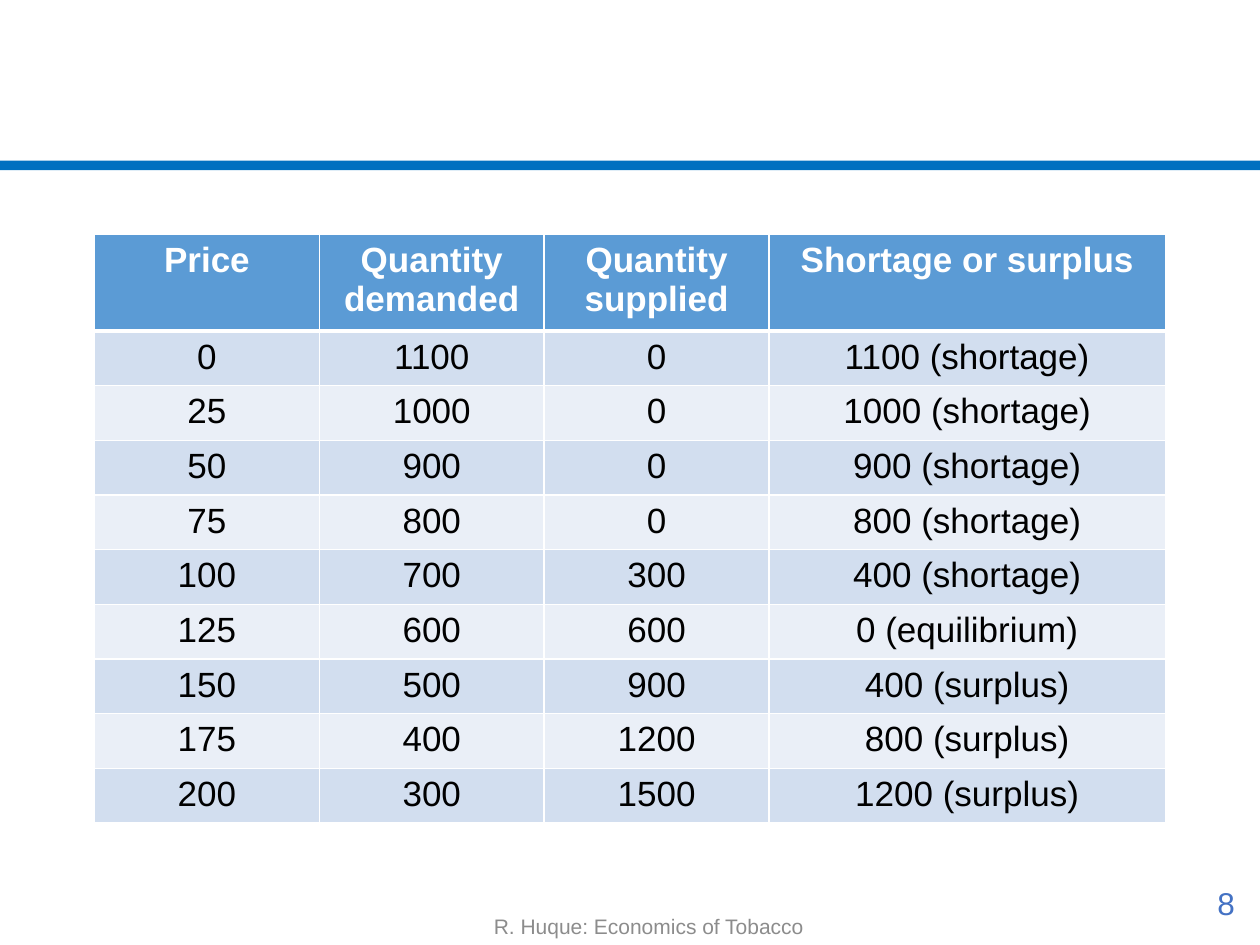
from lxml.etree import SubElement
from pptx import Presentation
from pptx.dml.color import RGBColor as Color
from pptx.enum.shapes import MSO_SHAPE as Preset
from pptx.enum.text import MSO_ANCHOR as Anchor, PP_ALIGN as Align
from pptx.oxml.ns import qn
from pptx.util import Inches, Pt

WIDTH, HEIGHT = 10, 7.5
FONT = "Arial"
COLORS = {
    "rule": "0070C0", "header": "5B9BD5", "band": "D2DEEF", "light": "EAEFF7",
    "white": "FFFFFF", "black": "000000", "footer": "8C8C8C", "number": "4472C4",
}
HEADINGS = ("Price", "Quantity demanded", "Quantity supplied", "Shortage or surplus")
MARKET = (
    (0, 1100, 0), (25, 1000, 0), (50, 900, 0), (75, 800, 0), (100, 700, 300),
    (125, 600, 600), (150, 500, 900), (175, 400, 1200), (200, 300, 1500),
)
COLUMN_SHARES = (0.21, 0.21, 0.21, 0.37)
HEADER_SHARE = 0.16


def box(left, top, width, height):
    """Turn shares of the slide's size into lengths."""
    return (Inches(left * WIDTH), Inches(top * HEIGHT),
            Inches(width * WIDTH), Inches(height * HEIGHT))


def color(name):
    """Look up a named colour."""
    return Color.from_string(COLORS[name])


def write(frame, text, size, color_name, align, bold=False):
    """Write one styled run into a text frame."""
    paragraph = frame.paragraphs[0]
    paragraph.alignment = align
    run = paragraph.add_run()
    run.text = text
    run.font.name = FONT
    run.font.size = Pt(size)
    run.font.bold = bold
    run.font.color.rgb = color(color_name)


def add_rule(slide, area):
    """Draw the full-width bar under the title area."""
    shape = slide.shapes.add_shape(Preset.RECTANGLE, *area)
    shape.shadow.inherit = False
    shape.fill.solid()
    shape.fill.fore_color.rgb = color("rule")
    shape.line.fill.background()


def add_label(slide, area, text, size, color_name, align, anchor):
    """Place a single line of footer text."""
    frame = slide.shapes.add_textbox(*area).text_frame
    frame.word_wrap = True
    frame.vertical_anchor = anchor
    write(frame, text, size, color_name, align)


def set_borders(cell, top, bottom):
    """Draw white borders, with the given top and bottom widths in points."""
    properties = cell._tc.get_or_add_tcPr()
    for index, (side, width) in enumerate(
            (("lnL", 1), ("lnR", 1), ("lnT", top), ("lnB", bottom))):
        line = properties.makeelement(qn(f"a:{side}"), {"w": str(Pt(width))})
        fill = SubElement(line, qn("a:solidFill"))
        SubElement(fill, qn("a:srgbClr"), val=COLORS["white"])
        properties.insert(index, line)


def balance(demanded, supplied):
    """Describe the gap between demand and supply."""
    gap = demanded - supplied
    state = "shortage" if gap > 0 else "surplus" if gap < 0 else "equilibrium"
    return f"{abs(gap)} ({state})"


def add_market_table(slide, area):
    """Fill the area with the table of prices and quantities."""
    records = [HEADINGS] + [(*row, balance(*row[1:])) for row in MARKET]
    table = slide.shapes.add_table(len(records), len(HEADINGS), *area).table
    width, height = area[2:]
    for column, share in zip(table.columns, COLUMN_SHARES):
        column.width = int(width * share)
    for index, (row, record) in enumerate(zip(table.rows, records)):
        header = index == 0
        share = HEADER_SHARE if header else (1 - HEADER_SHARE) / len(MARKET)
        row.height = int(height * share)
        fill_name = "header" if header else "band" if index % 2 else "light"
        for cell, value in zip(row.cells, record):
            cell.fill.solid()
            cell.fill.fore_color.rgb = color(fill_name)
            write(cell.text_frame, str(value), 20,
                  "white" if header else "black", Align.CENTER, header)
            set_borders(cell, 3 if index == 1 else 1, 3 if header else 1)


def main():
    """Build and save the slide."""
    presentation = Presentation()
    presentation.slide_width = Inches(WIDTH)
    presentation.slide_height = Inches(HEIGHT)
    slide = presentation.slides.add_slide(presentation.slide_layouts[6])
    add_rule(slide, box(0, 0.17, 1, 0.01))
    add_label(slide, box(0.33, 0.95, 0.37, 0.05), "R. Huque: Economics of Tobacco",
              12, "footer", Align.CENTER, Anchor.BOTTOM)
    add_label(slide, box(0.77, 0.93, 0.22, 0.05), "8",
              18, "number", Align.RIGHT, Anchor.MIDDLE)
    add_market_table(slide, box(0.075, 0.248, 0.85, 0.587))
    presentation.save("out.pptx")


if __name__ == "__main__":
    main()
